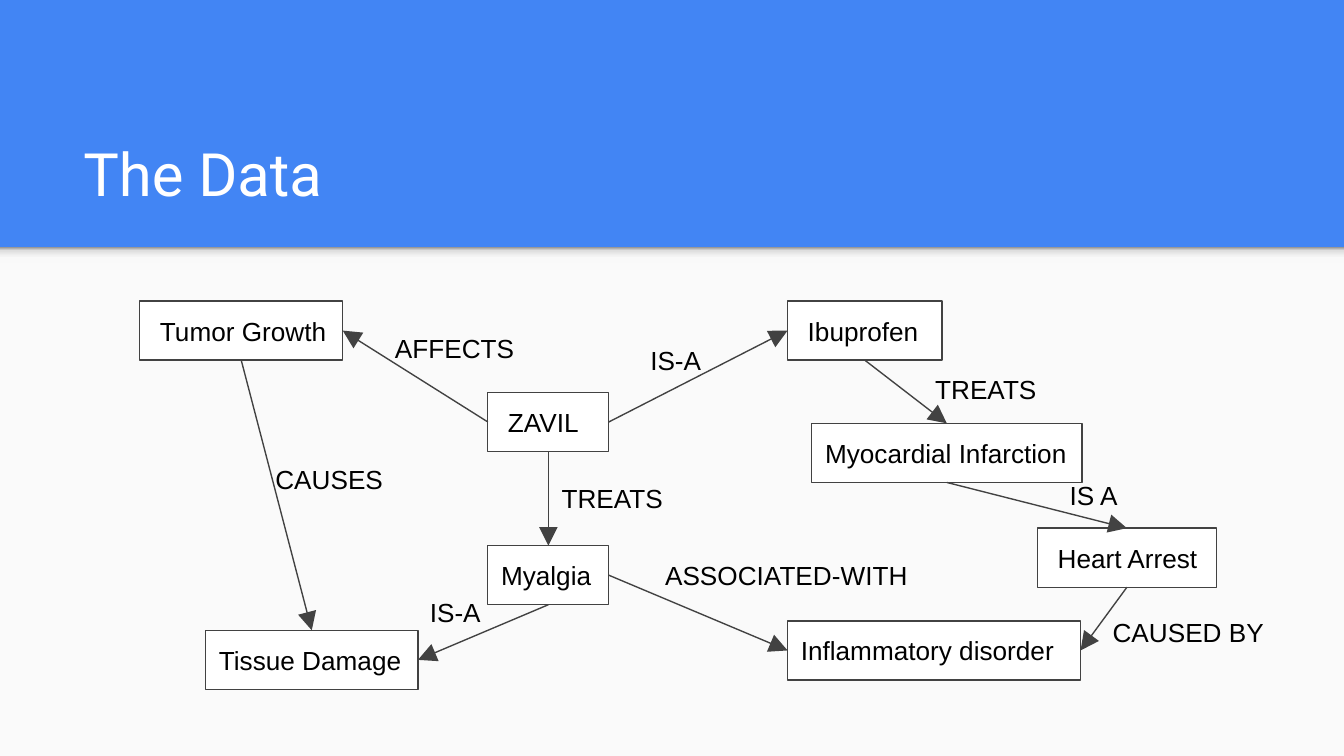
from dataclasses import dataclass

import lxml.etree
import pptx
import pptx.dml.color
import pptx.enum.shapes
import pptx.enum.text
import pptx.oxml.ns
import pptx.slide
import pptx.text.text
import pptx.util
from pptx.util import Inches

TOP, LEFT, BOTTOM, RIGHT = range(4)
SLIDE_WIDTH = 10
SLIDE_HEIGHT = SLIDE_WIDTH * 9 / 16
HEADER_HEIGHT = 1.84
BOX_HEIGHT = 0.44
INSET = 0.1


@dataclass(frozen=True)
class Theme:
    header: str = "4285F4"
    panel: str = "FAFAFA"
    box: str = "FFFFFF"
    line: str = "424242"
    text: str = "000000"
    title: str = "FFFFFF"
    shadow: tuple = ((0, "F9F9F9"), (36, "F9F9F9"), (80, "DEDEDE"), (100, "999999"))
    title_font: str = "Roboto"
    body_font: str = "Arial"
    title_size: float = 32
    body_size: float = 14
    line_width: float = 0.75


@dataclass(frozen=True)
class Concept:
    name: str
    left: float
    top: float
    width: float
    indent: float = 0


@dataclass(frozen=True)
class Relation:
    source: str
    source_side: int
    target: str
    target_side: int
    label: str
    label_left: float
    label_top: float
    label_width: float


THEME = Theme()

CONCEPTS = [
    Concept("ZAVIL", 3.63, 2.92, 0.9, 0.05),
    Concept("Ibuprofen", 5.86, 2.24, 1.15, 0.05),
    Concept("Tumor Growth", 1.04, 2.24, 1.51, 0.05),
    Concept("Myalgia", 3.63, 4.06, 0.9),
    Concept("Inflammatory disorder", 5.86, 4.62, 2.18),
    Concept("Tissue Damage", 1.53, 4.69, 1.58),
    Concept("Myocardial Infarction", 6.04, 3.15, 2.01),
    Concept("Heart Arrest", 7.72, 3.93, 1.33, 0.05),
]

RELATIONS = [
    Relation("ZAVIL", RIGHT, "Ibuprofen", LEFT, "IS-A", 4.74, 2.46, 0.65),
    Relation("ZAVIL", LEFT, "Tumor Growth", RIGHT, "AFFECTS", 2.84, 2.37, 1.15),
    Relation("ZAVIL", BOTTOM, "Myalgia", TOP, "TREATS", 4.08, 3.49, 0.98),
    Relation("Myalgia", RIGHT, "Inflammatory disorder", LEFT,
             "ASSOCIATED-WITH", 4.85, 4.06, 2.01),
    Relation("Myalgia", BOTTOM, "Tissue Damage", RIGHT, "IS-A", 3.1, 4.34, 0.65),
    Relation("Tumor Growth", BOTTOM, "Tissue Damage", TOP, "CAUSES", 1.95, 3.35, 1.15),
    Relation("Ibuprofen", BOTTOM, "Myocardial Infarction", TOP, "TREATS", 6.86, 2.68, 0.98),
    Relation("Myocardial Infarction", BOTTOM, "Heart Arrest", TOP, "IS A", 7.86, 3.47, 1.33),
    Relation("Heart Arrest", BOTTOM, "Inflammatory disorder", RIGHT,
             "CAUSED BY", 8.18, 4.49, 1.33),
]


def rgb(value: str) -> pptx.dml.color.RGBColor:
    return pptx.dml.color.RGBColor.from_string(value)


def write_text(frame: pptx.text.text.TextFrame, text: str, font: str, size: float, color: str,
               anchor: pptx.enum.text.MSO_ANCHOR, indent: float = 0) -> None:
    frame.text = text
    frame.word_wrap = True
    frame.auto_size = pptx.enum.text.MSO_AUTO_SIZE.NONE
    frame.vertical_anchor = anchor
    frame.margin_left = Inches(INSET + indent)
    frame.margin_top = frame.margin_bottom = frame.margin_right = Inches(INSET)
    para = frame.paragraphs[0]
    para.alignment = pptx.enum.text.PP_ALIGN.LEFT
    span = para.runs[0]
    span.font.name = font
    span.font.size = pptx.util.Pt(size)
    span.font.color.rgb = rgb(color)


def add_rectangle(page: pptx.slide.Slide, left: float, top: float, width: float, height: float):
    box = page.shapes.add_shape(pptx.enum.shapes.MSO_SHAPE.RECTANGLE, Inches(left), Inches(top),
                                Inches(width), Inches(height))
    box.shadow.inherit = False
    return box


def add_backdrop(page: pptx.slide.Slide) -> None:
    """Draw the blue header, the light panel and the soft shadow between them."""
    page.background.fill.solid()
    page.background.fill.fore_color.rgb = rgb(THEME.header)

    panel = add_rectangle(page, 0, HEADER_HEIGHT, SLIDE_WIDTH, SLIDE_HEIGHT - HEADER_HEIGHT)
    panel.fill.solid()
    panel.fill.fore_color.rgb = rgb(THEME.panel)
    panel.line.fill.background()

    shadow = add_rectangle(page, 0, HEADER_HEIGHT, SLIDE_WIDTH, 0.12)
    shadow.line.fill.background()
    shadow.fill.gradient()
    shadow.fill.gradient_angle = 90
    qn = pptx.oxml.ns.qn
    stops = shadow.fill._xPr.find(".//" + qn("a:gsLst"))
    for stop in list(stops):
        stops.remove(stop)
    for position, color in THEME.shadow:
        stop = lxml.etree.SubElement(stops, qn("a:gs"), pos=str(position * 1000))
        lxml.etree.SubElement(stop, qn("a:srgbClr"), val=color)


def add_title(page: pptx.slide.Slide, text: str) -> None:
    title = page.shapes.title
    title.left, title.top = Inches(0.52), Inches(0.81)
    title.width, title.height = Inches(8.99), Inches(0.84)
    write_text(title.text_frame, text, THEME.title_font, THEME.title_size, THEME.title,
               pptx.enum.text.MSO_ANCHOR.BOTTOM)


def add_concept(page: pptx.slide.Slide, concept: Concept):
    box = add_rectangle(page, concept.left, concept.top, concept.width, BOX_HEIGHT)
    box.fill.solid()
    box.fill.fore_color.rgb = rgb(THEME.box)
    box.line.color.rgb = rgb(THEME.line)
    box.line.width = pptx.util.Pt(THEME.line_width)
    write_text(box.text_frame, concept.name, THEME.body_font, THEME.body_size, THEME.text,
               pptx.enum.text.MSO_ANCHOR.MIDDLE, concept.indent)
    return box


def add_relation(page: pptx.slide.Slide, relation: Relation, boxes: dict) -> None:
    """Join two concept boxes with an arrow and put the relation's label beside it."""
    arrow = page.shapes.add_connector(pptx.enum.shapes.MSO_CONNECTOR.STRAIGHT, 0, 0, 0, 0)
    arrow.begin_connect(boxes[relation.source], relation.source_side)
    arrow.end_connect(boxes[relation.target], relation.target_side)
    arrow.line.color.rgb = rgb(THEME.line)
    arrow.line.width = pptx.util.Pt(THEME.line_width)
    qn = pptx.oxml.ns.qn
    lxml.etree.SubElement(arrow.line._get_or_add_ln(), qn("a:tailEnd"),
                          type="triangle", w="lg", len="lg")
    lxml.etree.SubElement(arrow._element.spPr, qn("a:effectLst"))

    label = page.shapes.add_textbox(Inches(relation.label_left), Inches(relation.label_top),
                                    Inches(relation.label_width), Inches(BOX_HEIGHT))
    write_text(label.text_frame, relation.label, THEME.body_font, THEME.body_size, THEME.text,
               pptx.enum.text.MSO_ANCHOR.TOP)


def main() -> None:
    deck = pptx.Presentation()
    deck.slide_width, deck.slide_height = Inches(SLIDE_WIDTH), Inches(SLIDE_HEIGHT)
    page = deck.slides.add_slide(deck.slide_layouts.get_by_name("Title Only"))
    add_backdrop(page)
    add_title(page, "The Data")
    boxes = {concept.name: add_concept(page, concept) for concept in CONCEPTS}
    for relation in RELATIONS:
        add_relation(page, relation, boxes)
    deck.save("out.pptx")


if __name__ == "__main__":
    main()
